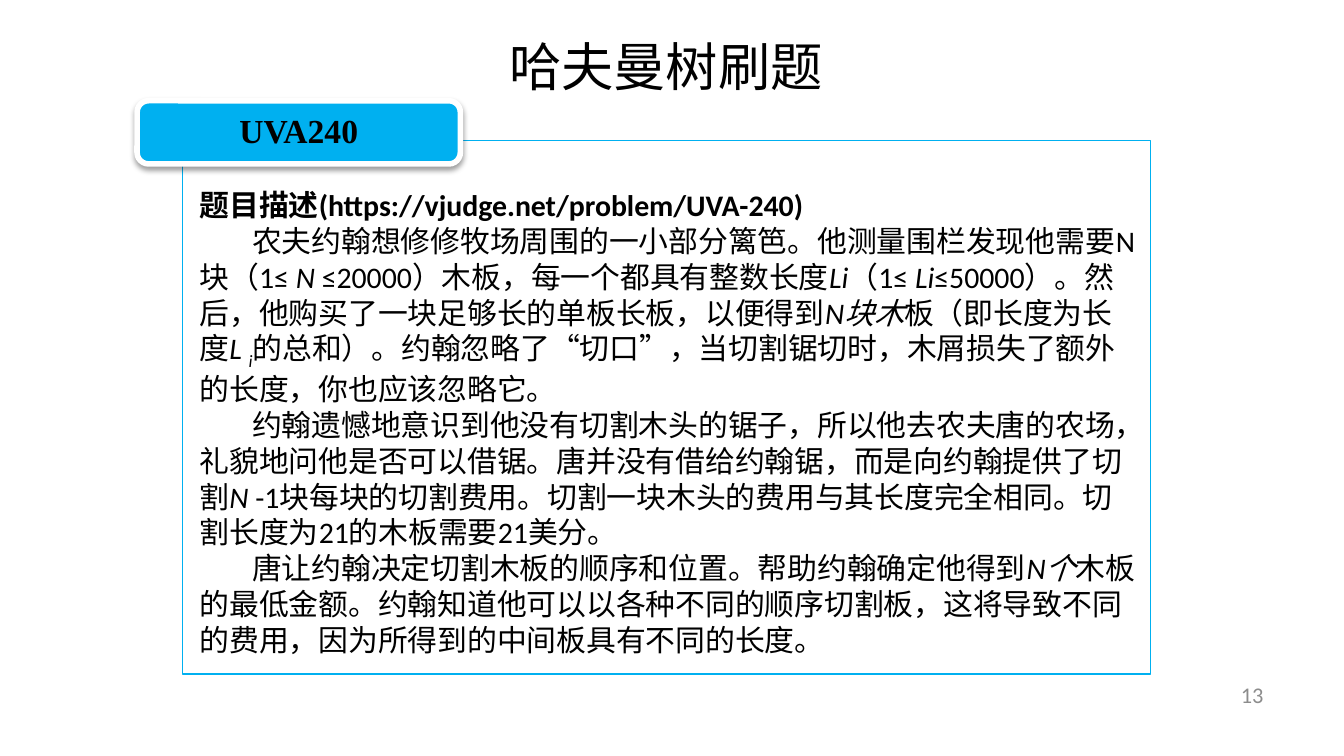
from lxml import etree
from pptx import Presentation
from pptx.dml.color import RGBColor
from pptx.enum.shapes import MSO_SHAPE
from pptx.enum.text import MSO_ANCHOR, MSO_AUTO_SIZE, PP_ALIGN
from pptx.oxml.ns import qn
from pptx.util import Pt

PX = 4572
RECT, ROUND = MSO_SHAPE.RECTANGLE, MSO_SHAPE.ROUNDED_RECTANGLE
TOP, MIDDLE = MSO_ANCHOR.TOP, MSO_ANCHOR.MIDDLE
LEFT, CENTER, RIGHT = PP_ALIGN.LEFT, PP_ALIGN.CENTER, PP_ALIGN.RIGHT
FIXED = MSO_AUTO_SIZE.NONE
COLORS = {"ink": "000000", "paper": "FFFFFF", "blue": "00B0F0", "gray": "8C8C8C"}
LATIN, HAN, SERIF = "Calibri", "Noto Sans CJK SC", "Times New Roman"
PLAIN, BOLD, ITALIC, SUB = "plain", "bold", "italic", "sub"

HEAD = [("题目描述(https://vjudge.net/problem/UVA-240)", BOLD)]
STORY = [
    [("农夫约翰想修修牧场周围的一小部分篱笆。他测量围栏发现他需要N块（1≤ ", PLAIN),
     ("N", ITALIC),
     (" ≤20000）木板，每一个都具有整数长度", PLAIN),
     ("Li", ITALIC),
     ("（1≤ ", PLAIN),
     ("Li", ITALIC),
     ("≤50000）。然后，他购买了一块足够长的单板长板，以便得到", PLAIN),
     ("N块木", ITALIC),
     ("板（即长度为长度", PLAIN),
     ("L ", ITALIC),
     ("i", SUB),
     ("的总和）。约翰忽略了“切口”，当切割锯切时，木屑损失了额外的长度，你也应该忽略它。", PLAIN)],
    [("约翰遗憾地意识到他没有切割木头的锯子，所以他去农夫唐的农场，礼貌地问他是否可以借锯。"
      "唐并没有借给约翰锯，而是向约翰提供了切割", PLAIN),
     ("N ", ITALIC),
     ("-1块每块的切割费用。切割一块木头的费用与其长度完全相同。切割长度为21的木板需要21美分。", PLAIN)],
    [("唐让约翰决定切割木板的顺序和位置。帮助约翰确定他得到", PLAIN),
     ("N个", ITALIC),
     ("木板的最低金额。约翰知道他可以以各种不同的顺序切割板，这将导致不同的费用，"
      "因为所得到的中间板具有不同的长度。", PLAIN)],
]


def tint(name):
    return RGBColor.from_string(COLORS[name])


def place(shape, box):
    shape.left, shape.top, shape.width, shape.height = (n * PX for n in box)


def setup(shape, anchor):
    frame = shape.text_frame
    frame.word_wrap = True
    frame.auto_size = FIXED
    frame.vertical_anchor = anchor
    return frame


def write(para, text, size, face=LATIN, color="ink", style=PLAIN):
    run = para.add_run()
    run.text = text
    font = run.font
    font.size, font.name = Pt(size), face
    font.color.rgb = tint(color)
    font.bold = style == BOLD
    font.italic = style in (ITALIC, SUB)
    props = run._r.get_or_add_rPr()
    etree.SubElement(props, qn("a:ea")).set("typeface", HAN)
    if style == SUB:
        props.set("baseline", "-25000")


def block(slide, kind, box, fill, line, width):
    shape = slide.shapes.add_shape(kind, *(n * PX for n in box))
    shape.shadow.inherit = False
    shape.fill.solid()
    shape.fill.fore_color.rgb = tint(fill)
    shape.line.color.rgb = tint(line)
    shape.line.width = Pt(width)
    return shape


def add_alpha(color, share):
    etree.SubElement(color, qn("a:alpha")).set("val", str(share * 1000))


def title(slide, box):
    shape = slide.shapes.title
    place(shape, box)
    para = setup(shape, TOP).paragraphs[0]
    para.alignment = CENTER
    para.line_spacing = 1.35
    write(para, "哈夫曼树刷题", 28, HAN)


def tag(slide, box):
    shape = block(slide, ROUND, box, "blue", "paper", 3)
    shape.adjustments[0] = 0.18
    effects = shape._element.spPr.find(qn("a:effectLst"))
    shade = etree.SubElement(effects, qn("a:outerShdw"), blurRad=str(Pt(3.1)),
                             dist=str(Pt(1.6)), dir="5400000", rotWithShape="0")
    color = etree.SubElement(shade, qn("a:srgbClr"), val=COLORS["ink"])
    add_alpha(color, 38)
    para = setup(shape, MIDDLE).paragraphs[0]
    para.alignment = CENTER
    para.line_spacing = 0.9
    write(para, "UVA240", 18, SERIF, style=BOLD)


def story(slide, box):
    shape = slide.placeholders[1]
    slide.shapes._spTree.append(shape._element)
    place(shape, box)
    frame = setup(shape, TOP)
    for i, parts in enumerate([HEAD] + STORY):
        para = frame.add_paragraph() if i else frame.paragraphs[0]
        props = para._p.get_or_add_pPr()
        props.set("marL", "0")
        props.set("indent", str(78 * PX if i else 0))
        etree.SubElement(props, qn("a:buNone"))
        para.alignment = LEFT
        para.line_spacing = 1.0
        para.space_before = Pt(0)
        for text, style in parts:
            write(para, text, 16, style=style)


def problem(slide, box):
    x, y, w, h = box
    panel = block(slide, RECT, (x + 68, y + 59, w - 68, h - 59), "paper", "blue", 0.75)
    fill = panel._element.spPr.find(qn("a:solidFill"))
    add_alpha(fill[0], 90)
    tag(slide, (x, y, 481, 94))
    story(slide, (x + 73, y + 118, w - 68, 720))


def number(slide, box):
    shape = slide.shapes.add_textbox(*(n * PX for n in box))
    para = setup(shape, MIDDLE).paragraphs[0]
    para.alignment = RIGHT
    write(para, "13", 12, color="gray")


def main():
    deck = Presentation()
    deck.slide_width, deck.slide_height = 2000 * PX, 1125 * PX
    slide = deck.slides.add_slide(deck.slide_layouts[1])
    title(slide, (661, 8, 660, 134))
    problem(slide, (204, 150, 1508, 853))
    number(slide, (1434, 1004, 466, 60))
    deck.save("out.pptx")


if __name__ == "__main__":
    main()
